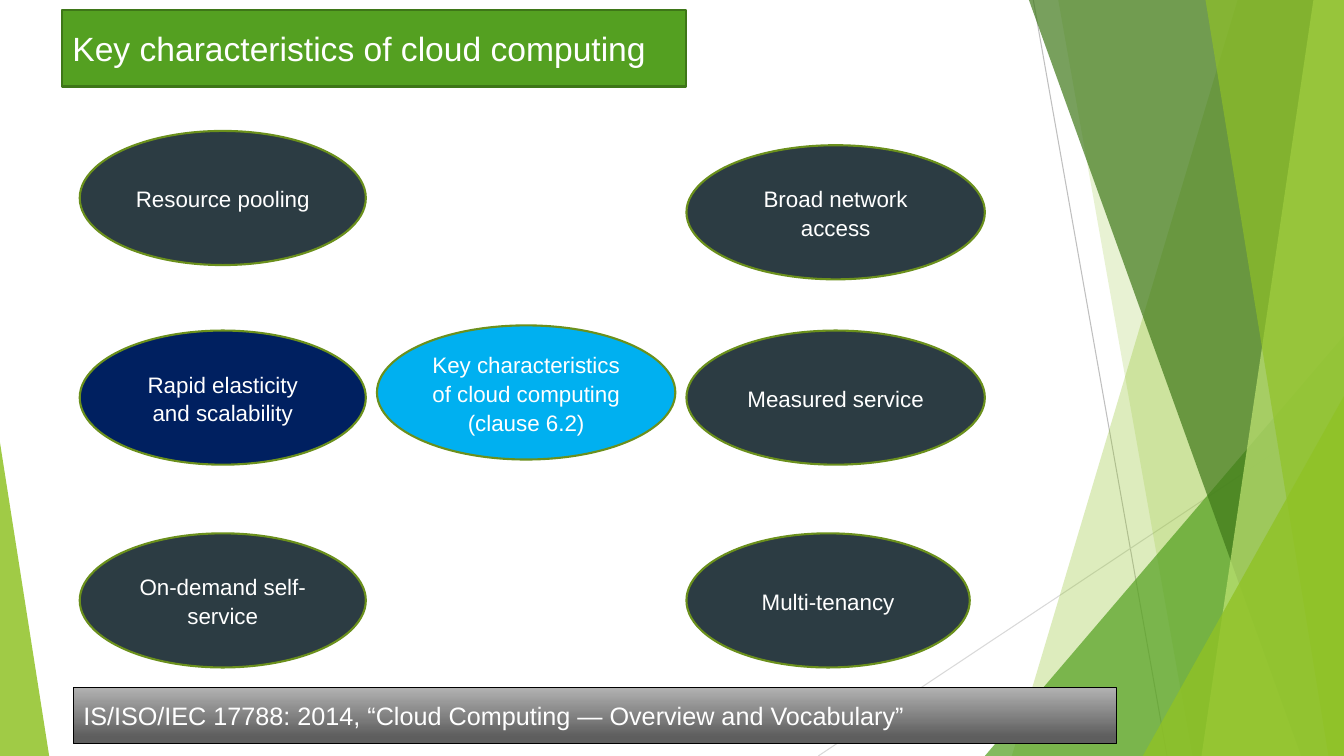
"""Build the slide on the key characteristics of cloud computing."""
from dataclasses import dataclass

from lxml import etree
from pptx import Presentation
from pptx import util as u
from pptx.dml import color as dml
from pptx.enum import shapes, text
from pptx.oxml import ns

WIDTH, HEIGHT = 33.87, 19.05
GREEN, SLATE, WHITE = "90C226", "2C3C43", "FFFFFF"
ELLIPSE_HEIGHT = 3.38
LEFT_COLUMN, CENTRE_COLUMN, RIGHT_COLUMN = 2.01, 9.5, 17.3
MIDDLE_ROW, BOTTOM_ROW = 8.33, 13.44

FRAME_FORMAT = {
    "word_wrap": True,
    "auto_size": text.MSO_AUTO_SIZE.NONE,
    "vertical_anchor": text.MSO_ANCHOR.MIDDLE,
}
LEFT_FORMAT = {"alignment": text.PP_ALIGN.LEFT}
ELLIPSE_FORMAT = {
    "alignment": text.PP_ALIGN.CENTER,
    "line_spacing": 1.07,
    "space_after": u.Pt(8),
}


@dataclass
class Box:
    left: float
    top: float
    width: float
    height: float

    def lengths(self) -> list:
        return [u.Cm(v) for v in (self.left, self.top, self.width, self.height)]


@dataclass
class Shard:
    top_x: float
    bottom_x: float
    colour: str
    opacity: int


@dataclass
class Triangle:
    box: Box
    apex: float
    colour: str
    opacity: int


@dataclass
class Ray:
    start: tuple
    end: tuple
    colour: str


@dataclass
class Characteristic:
    label: str
    left: float
    top: float
    width: float
    colour: str = SLATE


DECORATION = [
    Ray((26.04, 0), (29.41, HEIGHT), "BFBFBF"),
    Ray((WIDTH, 10.24), (20.62, HEIGHT), "D9D9D9"),
    Shard(31.19, 25.5, GREEN, 30),
    Shard(26.67, 30.05, GREEN, 20),
    Triangle(Box(24.82, 8.46, 9.05, 10.59), 1, "54A021", 72),
    Shard(25.93, 32.79, "3F7819", 70),
    Shard(33.1, 30.28, "C0E474", 70),
    Shard(30.38, 33.48, GREEN, 65),
    Triangle(Box(28.8, 9.98, 5.07, 9.07), 1, GREEN, 80),
    Triangle(Box(0, 11.15, 1.24, 7.9), 0, GREEN, 85),
]

CHARACTERISTICS = [
    Characteristic("Key characteristics of cloud computing (clause 6.2)",
                   CENTRE_COLUMN, 8.2, 7.52, "00B0F0"),
    Characteristic("Broad network access", RIGHT_COLUMN, 3.66, 7.52),
    Characteristic("Resource pooling", LEFT_COLUMN, 3.3, 7.21),
    Characteristic("Measured service", RIGHT_COLUMN, MIDDLE_ROW, 7.52),
    Characteristic("Multi-tenancy", RIGHT_COLUMN, BOTTOM_ROW, 7.14),
    Characteristic("Rapid elasticity and scalability",
                   LEFT_COLUMN, MIDDLE_ROW, 7.21, "002060"),
    Characteristic("On-demand self-service", LEFT_COLUMN, BOTTOM_ROW, 7.21),
]


def rgb(colour: str) -> dml.RGBColor:
    return dml.RGBColor.from_string(colour)


def apply(target, values: dict) -> None:
    for name, value in values.items():
        setattr(target, name, value)


def paint(shape, colour: str, opacity: int = 100) -> None:
    shape.fill.solid()
    shape.fill.fore_color.rgb = rgb(colour)
    if opacity < 100:
        fill_colour = shape.fill._xPr.find(".//" + ns.qn("a:srgbClr"))
        etree.SubElement(fill_colour, ns.qn("a:alpha"), val=str(opacity * 1000))


def outline(shape, colour: str, points: float) -> None:
    shape.line.color.rgb = rgb(colour)
    shape.line.width = u.Pt(points)


def write(shape, label: str, size: int, paragraph_format: dict) -> None:
    frame = shape.text_frame
    frame.text = label
    apply(frame, FRAME_FORMAT)
    paragraph = frame.paragraphs[0]
    apply(paragraph, paragraph_format)
    font = paragraph.runs[0].font
    apply(font, {"name": "Arial", "size": u.Pt(size)})
    font.color.rgb = rgb(WHITE)


def add_preset(slide, kind, box: Box):
    shape = slide.shapes.add_shape(kind, *box.lengths())
    shape.shadow.inherit = False
    return shape


def draw_ray(slide, ray: Ray) -> None:
    ends = [u.Cm(v) for v in ray.start + ray.end]
    line = slide.shapes.add_connector(shapes.MSO_CONNECTOR.STRAIGHT, *ends)
    outline(line, ray.colour, 0.75)
    etree.SubElement(line._element.spPr, ns.qn("a:effectLst"))


def draw_shard(slide, shard: Shard) -> None:
    corners = [(shard.top_x, 0), (WIDTH, 0), (WIDTH, HEIGHT), (shard.bottom_x, HEIGHT)]
    points = [(u.Cm(x), u.Cm(y)) for x, y in corners]
    builder = slide.shapes.build_freeform(*points[0])
    builder.add_line_segments(points[1:], close=True)
    shape = builder.convert_to_shape()
    shape.shadow.inherit = False
    paint(shape, shard.colour, shard.opacity)
    shape.line.fill.background()


def draw_triangle(slide, triangle: Triangle) -> None:
    shape = add_preset(slide, shapes.MSO_SHAPE.ISOSCELES_TRIANGLE, triangle.box)
    shape.adjustments[0] = triangle.apex
    paint(shape, triangle.colour, triangle.opacity)
    shape.line.fill.background()


def draw_characteristic(slide, item: Characteristic) -> None:
    box = Box(item.left, item.top, item.width, ELLIPSE_HEIGHT)
    shape = add_preset(slide, shapes.MSO_SHAPE.OVAL, box)
    paint(shape, item.colour)
    outline(shape, "6B901C", 1.5)
    write(shape, item.label, 16, ELLIPSE_FORMAT)


def draw_title(slide) -> None:
    title = slide.shapes.title
    names = ("left", "top", "width", "height")
    apply(title, dict(zip(names, Box(1.57, 0.25, 15.72, 1.93).lengths())))
    paint(title, "54A021")
    outline(title, "3E7618", 1.5)
    write(title, "Key characteristics of cloud computing", 24, LEFT_FORMAT)


def draw_source(slide) -> None:
    bar = add_preset(slide, shapes.MSO_SHAPE.RECTANGLE, Box(1.85, 17.32, 26.29, 1.42))
    bar.fill.gradient()
    bar.fill.gradient_angle = 270
    for stop, (position, colour) in zip(bar.fill.gradient_stops,
                                        [(0, "B2B2B2"), (0.88, "5E5E5E")]):
        stop.position = position
        stop.color.rgb = rgb(colour)
    outline(bar, "000000", 1)
    write(bar, "IS/ISO/IEC 17788: 2014, “Cloud Computing — Overview and Vocabulary”",
          18, LEFT_FORMAT)


def main() -> None:
    presentation = Presentation()
    apply(presentation, {"slide_width": u.Cm(WIDTH), "slide_height": u.Cm(HEIGHT)})
    slide = presentation.slides.add_slide(presentation.slide_layouts[5])
    painters = {Ray: draw_ray, Shard: draw_shard, Triangle: draw_triangle}
    for part in DECORATION:
        painters[type(part)](slide, part)
    draw_title(slide)
    for item in CHARACTERISTICS:
        draw_characteristic(slide, item)
    draw_source(slide)
    presentation.save("out.pptx")


if __name__ == "__main__":
    main()
